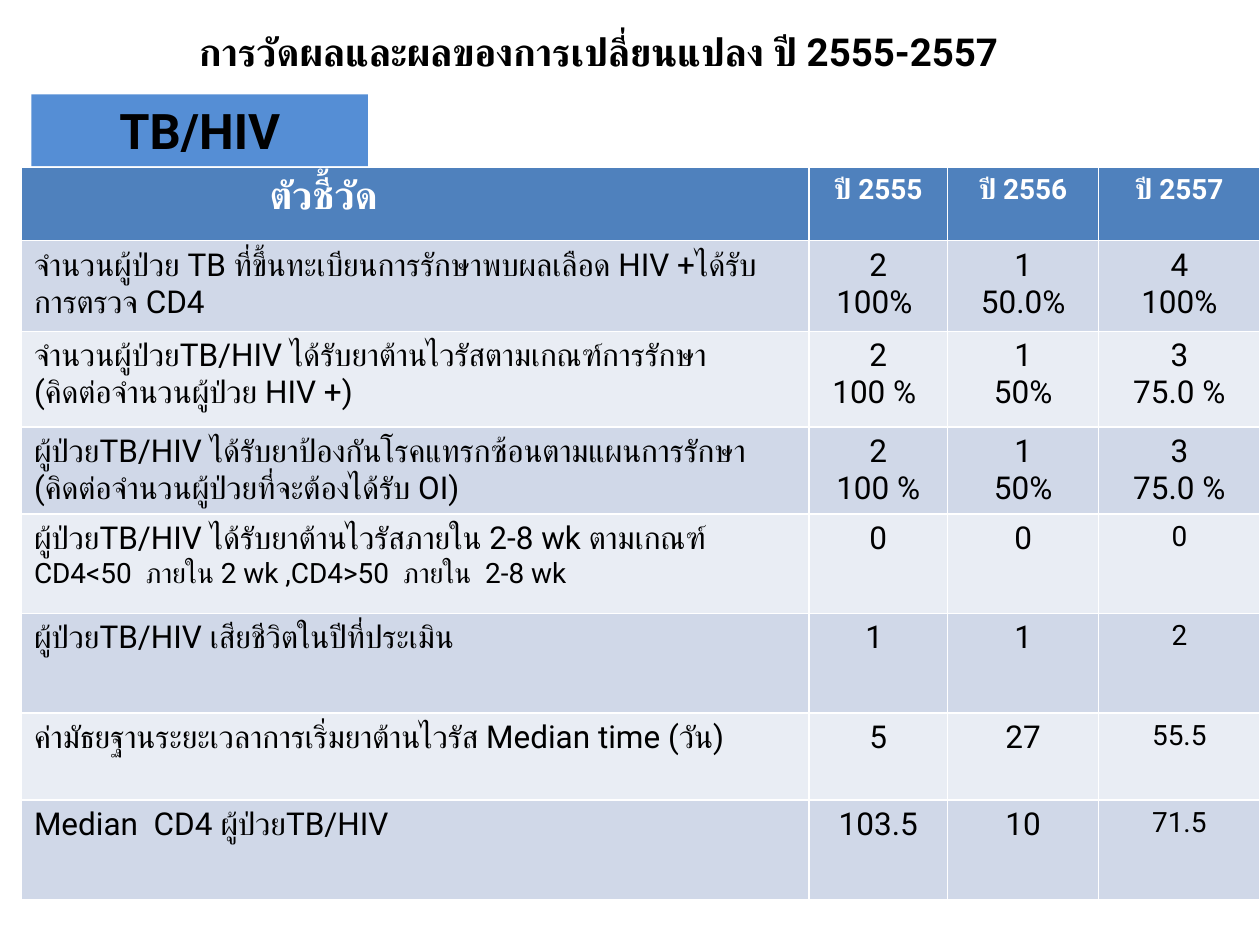
from lxml import etree
from pptx import Presentation
from pptx.dml.color import RGBColor
from pptx.enum import shapes, text
from pptx.oxml.ns import qn
from pptx.util import Inches, Pt

FONT = "Roboto"
BLACK, WHITE = "000000", "FFFFFF"
HEADER_FILL, BANDS = "4F81BD", ("D0D8E8", "E9EDF4")
COLUMNS = (6.25, 1.1, 1.2, 1.28)
HEIGHTS = (0.58, 0.72, 0.76, 0.69, 0.79, 0.79, 0.69, 0.79)

HEADER = ("ตัวชี้วัด", "ปี 2555", "ปี 2556", "ปี 2557")
# Each cell is a list of lines, separated by a newline.
PERCENT_ROWS = (
    ("จำนวนผู้ป่วย TB ที่ขึ้นทะเบียนการรักษาพบผลเลือด HIV +ได้รับการตรวจ CD4",
     "2\n100% ", "1\n50.0%", "4\n100%"),
    ("จำนวนผู้ป่วยTB/HIV ได้รับยาต้านไวรัสตามเกณฑ์การรักษา\n(คิดต่อจำนวนผู้ป่วย HIV +)",
     "2\n100 % ", "1\n50%", "3\n75.0 %"),
    ("ผู้ป่วยTB/HIV ได้รับยาป้องกันโรคแทรกซ้อนตามแผนการรักษา (คิดต่อจำนวนผู้ป่วยที่จะต้องได้รับ OI)",
     "2\n100 %", "1\n50%", "3\n75.0 %"),
)
COUNT_ROWS = (
    ("ผู้ป่วยTB/HIV ได้รับยาต้านไวรัสภายใน 2-8 wk ตามเกณฑ์\n"
     "CD4<50  ภายใน 2 wk ,CD4>50  ภายใน  2-8 wk", "0", "0", "0"),
    ("ผู้ป่วยTB/HIV เสียชีวิตในปีที่ประเมิน", "1 ", "1", "2"),
    ("ค่ามัธยฐานระยะเวลาการเริ่มยาต้านไวรัส Median time (วัน)", "5", "27", "55.5"),
    ("Median  CD4 ผู้ป่วยTB/HIV", "103.5", "10", "71.5"),
)


def color(value):
    return RGBColor.from_string(value)


def fill(target, value):
    target.fill.solid()
    target.fill.fore_color.rgb = color(value)


def write(tf, content, sizes=(18,), ink=BLACK, bold=False, center=False, hanging=0):
    """Write one paragraph per line; the last size serves all further lines."""
    tf.word_wrap = True
    for i, line in enumerate(content.split("\n")):
        p = tf.paragraphs[0] if i == 0 else tf.add_paragraph()
        p.alignment = text.PP_ALIGN.CENTER if center else text.PP_ALIGN.LEFT
        if hanging:
            pPr = p._p.get_or_add_pPr()
            pPr.set("marL", str(Inches(hanging)))
            pPr.set("indent", str(-Inches(hanging)))
        r = p.add_run()
        r.text = line
        r.font.size = Pt(sizes[min(i, len(sizes) - 1)])
        r.font.bold = bold
        r.font.color.rgb = color(ink)
        r.font.name = FONT
        # Thai is set in the complex-script font.
        etree.SubElement(r.font._element, qn("a:cs"), typeface=FONT)


def add_title(s, content):
    sp = s.shapes.title
    sp.left, sp.top, sp.width, sp.height = map(Inches, (0.25, 0.17, 9, 0.67))
    tf = sp.text_frame
    write(tf, content, sizes=(22,), bold=True, center=True)
    tf.auto_size = text.MSO_AUTO_SIZE.NONE
    tf.vertical_anchor = text.MSO_ANCHOR.TOP


def add_label(s, content):
    sp = s.shapes.add_shape(shapes.MSO_SHAPE.RECTANGLE,
                            *map(Inches, (0.25, 0.75, 2.67, 0.57)))
    sp.shadow.inherit = False
    fill(sp, "558ED5")
    sp.line.fill.background()
    write(sp.text_frame, content, sizes=(28,), bold=True, center=True)
    sp.text_frame.auto_size = text.MSO_AUTO_SIZE.SHAPE_TO_FIT_TEXT


def add_indicator_table(s):
    rows = PERCENT_ROWS + COUNT_ROWS
    table = s.shapes.add_table(
        len(rows) + 1, len(COLUMNS), Inches(0.17), Inches(1.33),
        Inches(sum(COLUMNS)), Inches(sum(HEIGHTS))).table
    for column, width in zip(table.columns, COLUMNS):
        column.width = Inches(width)
    for row, height in zip(table.rows, HEIGHTS):
        row.height = Inches(height)

    for c, label in enumerate(HEADER):
        cell = table.cell(0, c)
        fill(cell, HEADER_FILL)
        write(cell.text_frame, label, sizes=(16 if c else 22,), ink=WHITE,
              bold=True, center=c > 0)
    table.cell(0, 0).margin_left = Inches(1.97)

    for i, row in enumerate(rows):
        is_count = row in COUNT_ROWS
        for c, content in enumerate(row):
            cell = table.cell(i + 1, c)
            fill(cell, BANDS[i % 2])
            if c == 0:
                write(cell.text_frame, content, sizes=(18, 16) if is_count else (18,),
                      hanging=0.25 if is_count else 0)
            else:
                small = is_count and c == len(COLUMNS) - 1
                write(cell.text_frame, content, sizes=(16 if small else 18,), center=True)


def main():
    prs = Presentation()
    prs.slide_width, prs.slide_height = Inches(10), Inches(7.5)
    s = prs.slides.add_slide(prs.slide_layouts[5])
    add_indicator_table(s)
    add_title(s, "การวัดผลและผลของการเปลี่ยนแปลง ปี 2555-2557")
    add_label(s, "TB/HIV")
    prs.save("out.pptx")


if __name__ == "__main__":
    main()
